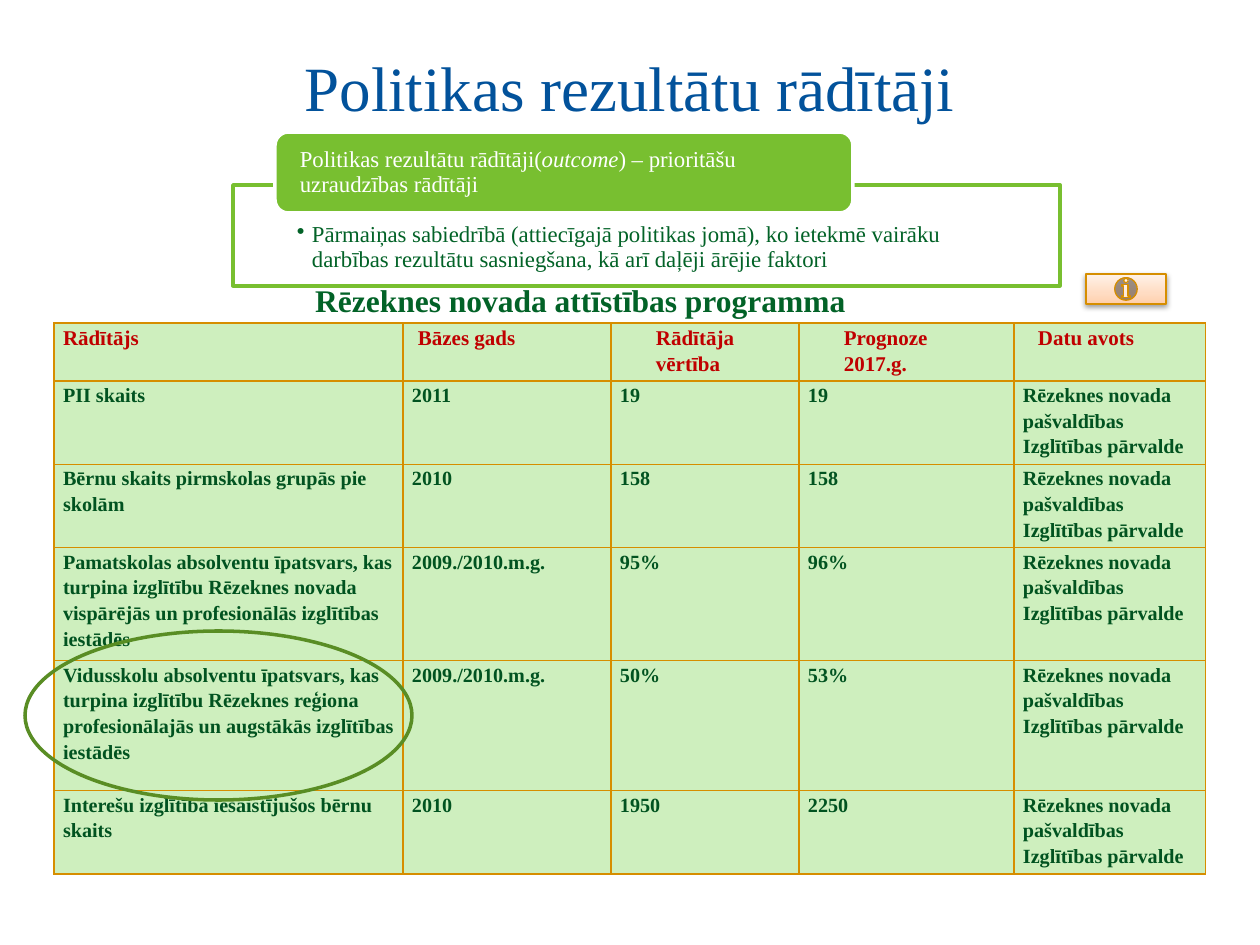
from copy import deepcopy

from lxml.etree import SubElement
from pptx import Presentation
from pptx.dml.color import RGBColor
from pptx.enum.shapes import MSO_SHAPE
from pptx.enum.text import MSO_ANCHOR, PP_ALIGN
from pptx.oxml import parse_xml
from pptx.oxml.ns import nsdecls, qn
from pptx.util import Emu, Pt

FONT = "Times New Roman"
GREEN, DARK, AMBER, WHITE = "78BF30", "026227", "D68E00", "FFFFFF"
SOURCE = "Rēzeknes novada pašvaldības Izglītības pārvalde"
HEADER = ["Rādītājs", "Bāzes gads", "Rādītāja vērtība", "Prognoze 2017.g.", "Datu avots"]
HEADER_INSETS = [9, 15, 45, 45, 24]
INDICATORS = [
    ["PII skaits", "2011", "19", "19"],
    ["Bērnu skaits pirmskolas grupās pie skolām", "2010", "158", "158"],
    ["Pamatskolas absolventu īpatsvars, kas turpina izglītību Rēzeknes novada "
     "vispārējās un profesionālās izglītības iestādēs", "2009./2010.m.g.", "95%", "96%"],
    ["Vidusskolu absolventu īpatsvars, kas turpina izglītību Rēzeknes reģiona "
     "profesionālajās un augstākās izglītības iestādēs", "2009./2010.m.g.", "50%", "53%"],
    ["Interešu izglītībā iesaistījušos bērnu skaits", "2010", "1950", "2250"],
]
COLS = [349, 208, 188, 215, 192]
ROWS = [53, 77, 77, 113, 130, 77]


def px(n):
    return Emu(round(n * 914400 / 126))


def rgb(color):
    return RGBColor.from_string(color)


def write(tf, text, size=13, color=DARK, bold=False, align=PP_ALIGN.LEFT,
          spacing=None, italic=None, bullet=None):
    tf.word_wrap = True
    p = tf.paragraphs[0]
    if bullet:
        pPr = p._p.get_or_add_pPr()
        pPr.set("marL", str(px(bullet)))
        pPr.set("indent", str(-px(bullet)))
        SubElement(pPr, qn("a:buChar")).set("char", "•")
    p.alignment = align
    if spacing:
        p.line_spacing = spacing
    for part in [text] if isinstance(text, str) else text:
        r = p.add_run()
        r.text = part
        r.font.name, r.font.size, r.font.bold = FONT, Pt(size), bold
        r.font.italic = part == italic
        r.font.color.rgb = rgb(color)


class Deck:
    """Holds the style and current slide and draws each kind of element."""

    def __init__(self):
        self.prs = Presentation()
        self.prs.slide_width, self.prs.slide_height = px(1260), px(945)
        self.s = self.prs.slides.add_slide(self.prs.slide_layouts[6])

    def text(self, box, text, anchor=MSO_ANCHOR.TOP, **fmt):
        tf = self.s.shapes.add_textbox(*map(px, box)).text_frame
        tf.vertical_anchor = anchor
        write(tf, text, **fmt)

    def shape(self, kind, box, line, width=2, fill=None):
        sp = self.s.shapes.add_shape(kind, *map(px, box))
        sp.shadow.inherit = False
        if fill:
            sp.fill.solid()
            sp.fill.fore_color.rgb = rgb(fill)
        else:
            sp.fill.background()
        sp.line.color.rgb = rgb(line)
        sp.line.width = Pt(width)
        return sp

    def label(self, sp, text, insets, anchor, **fmt):
        tf = sp.text_frame
        tf.margin_left, tf.margin_top, tf.margin_right, tf.margin_bottom = map(px, insets)
        tf.vertical_anchor = anchor
        write(tf, text, **fmt)

    def button(self, box, stops):
        sp = self.shape(MSO_SHAPE.ACTION_BUTTON_INFORMATION, box, AMBER, 0.75)
        sp.fill.gradient()
        sp.fill.gradient_angle = 90
        spPr = sp._element.spPr
        stop_list = spPr.find(qn("a:gradFill")).find(qn("a:gsLst"))
        stop_list.insert(1, deepcopy(stop_list[0]))
        for stop, (position, color) in zip(sp.fill.gradient_stops, stops):
            stop.position = position
            stop.color.rgb = rgb(color)
        spPr.find(qn("a:effectLst")).append(parse_xml(
            f'<a:outerShdw {nsdecls("a")} blurRad="{Pt(3.1)}" dist="{Pt(1.6)}" '
            'dir="5400000" rotWithShape="0"><a:srgbClr val="000000">'
            '<a:alpha val="38000"/></a:srgbClr></a:outerShdw>'))

    def cell(self, cell, text, inset, **fmt):
        cell.margin_left = cell.margin_right = px(inset)
        cell.margin_top = cell.margin_bottom = 0
        cell.fill.solid()
        cell.fill.fore_color.rgb = rgb("CEEFBE")
        tcPr = cell._tc.get_or_add_tcPr()
        for i, side in enumerate("LRTB"):
            tcPr.insert(i, parse_xml(
                f'<a:ln{side} {nsdecls("a")} w="{Pt(0.75)}"><a:solidFill>'
                f'<a:srgbClr val="{AMBER}"/></a:solidFill></a:ln{side}>'))
        write(cell.text_frame, text, bold=True, spacing=1.15, **fmt)

    def table(self, left, top, cols, rows):
        box = map(px, (left, top, sum(cols), sum(rows)))
        table = self.s.shapes.add_table(len(rows), len(cols), *box).table
        for col, width in zip(table.columns, cols):
            col.width = px(width)
        for row, height in zip(table.rows, rows):
            row.height = px(height)
        return table


def main():
    deck = Deck()
    deck.text((63, 38, 1134, 97), "Politikas rezultātu rādītāji", MSO_ANCHOR.MIDDLE,
              size=36, color="02529B", align=PP_ALIGN.CENTER)

    body = deck.shape(MSO_SHAPE.RECTANGLE, (233, 185, 827, 101), GREEN, fill=WHITE)
    deck.label(body, "Pārmaiņas sabiedrībā (attiecīgajā politikas jomā), ko ietekmē vairāku "
               "darbības rezultātu sasniegšana, kā arī daļēji ārējie faktori",
               (64, 38, 64, 13), MSO_ANCHOR.TOP, spacing=0.9, bullet=15)
    heading = deck.shape(MSO_SHAPE.ROUNDED_RECTANGLE, (275, 132, 578, 81), WHITE, fill=GREEN)
    deck.label(heading, ["Politikas rezultātu rādītāji(", "outcome",
                         ") – prioritāšu uzraudzības rādītāji"],
               (21, 0, 21, 0), MSO_ANCHOR.MIDDLE, color=WHITE, spacing=0.9, italic="outcome")

    table = deck.table(54, 323, COLS, ROWS)
    for c, (text, inset) in enumerate(zip(HEADER, HEADER_INSETS)):
        deck.cell(table.cell(0, c), text, inset, size=12, color="C00000")
    for r, values in enumerate(INDICATORS, 1):
        for c, text in enumerate(values + [SOURCE]):
            deck.cell(table.cell(r, c), text, 9, size=11.5, color="015320")

    deck.text((134, 275, 893, 50), "Rēzeknes novada attīstības programma",
              size=18, bold=True, align=PP_ALIGN.CENTER)
    deck.button((1086, 274, 80, 30), [(0, "FFCFAB"), (0.35, "FFDCC3"), (1, "FFF2E8")])
    deck.shape(MSO_SHAPE.OVAL, (25, 631, 387, 169), "598D24")
    deck.prs.save("out.pptx")


if __name__ == "__main__":
    main()
